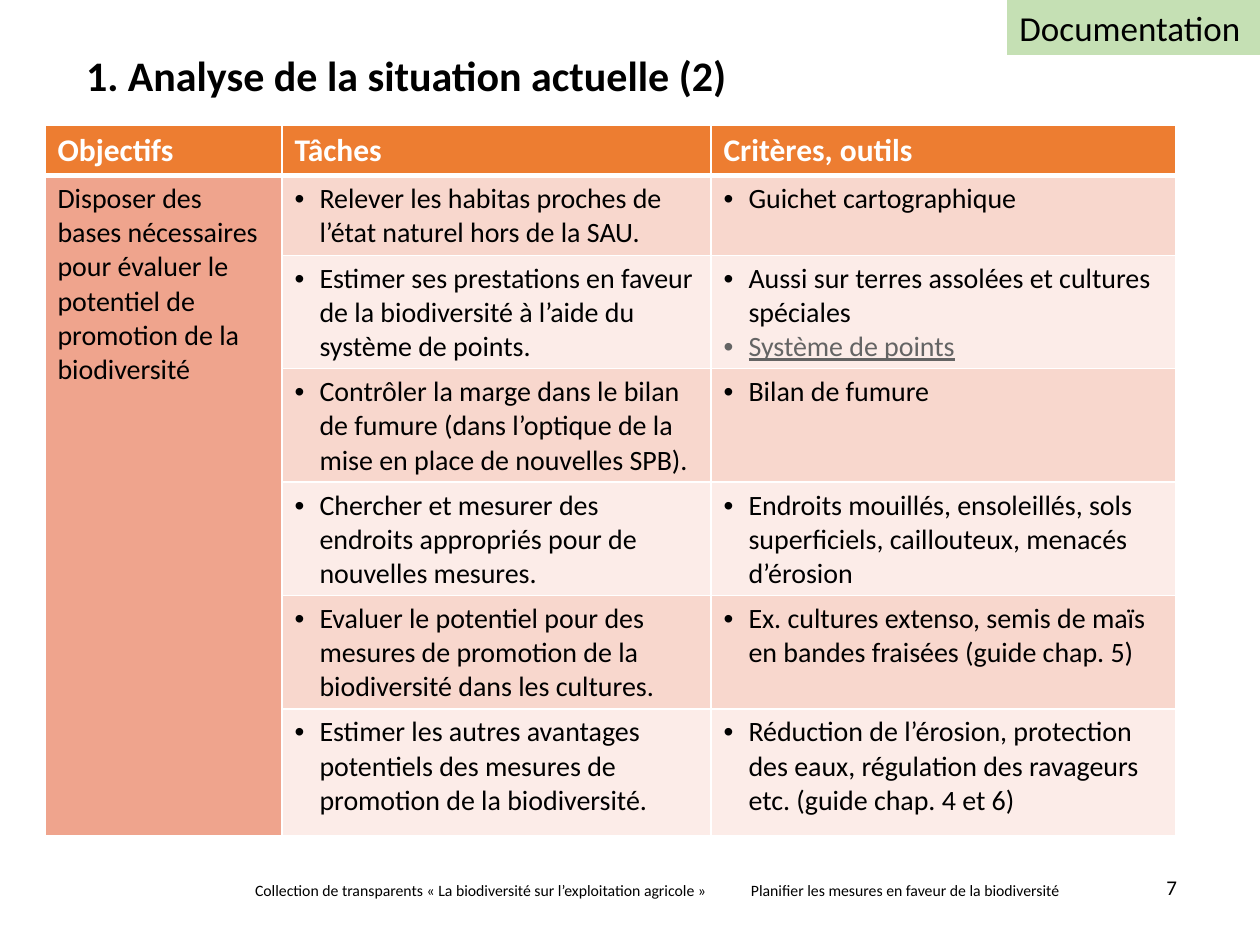
from dataclasses import dataclass

import pptx
import pptx.dml.color
import pptx.enum.shapes
import pptx.enum.text
import pptx.oxml
import pptx.oxml.ns
import pptx.util
from lxml import etree

PX_PER_INCH = 126
FONT = "Calibri"
BLACK, WHITE, LINK_GREY = "000000", "FFFFFF", "646464"
HEADER_FILL, GOAL_FILL, TAB_FILL = "ED7D31", "EFA48D", "C5E0B4"
BAND_FILLS = ("F8D7CD", "FCECE8")
HANGING = 25
LINK_TEXT = "Système de points"
ALIGN = pptx.enum.text.PP_ALIGN
ANCHOR = pptx.enum.text.MSO_ANCHOR


@dataclass(frozen=True)
class Box:
    left: int
    top: int
    width: int
    height: int


@dataclass(frozen=True)
class Step:
    height: int
    task: str
    criteria: tuple[str, ...]


TABLE_BOX = Box(45, 125, 1131, 710)
COLUMN_WIDTHS = (237, 429, 465)
HEADER_HEIGHT = 49
HEADERS = ("Objectifs", "Tâches", "Critères, outils")
GOAL = ("Disposer des bases nécessaires pour évaluer le potentiel "
        "de promotion de la biodiversité")
STEPS = (
    Step(78, "Relever les habitas proches de l’état naturel hors de la SAU.",
         ("Guichet cartographique",)),
    Step(110, "Estimer ses prestations en faveur de la biodiversité à l’aide "
              "du système de points.",
         ("Aussi sur terres assolées et cultures spéciales", LINK_TEXT)),
    Step(110, "Contrôler la marge dans le bilan de fumure (dans l’optique de "
              "la mise en place de nouvelles SPB).",
         ("Bilan de fumure",)),
    Step(110, "Chercher et mesurer des endroits appropriés pour de nouvelles "
              "mesures.",
         ("Endroits mouillés, ensoleillés, sols superficiels, caillouteux, "
          "menacés d’érosion",)),
    Step(110, "Evaluer le potentiel pour des mesures de promotion de la "
              "biodiversité dans les cultures.",
         ("Ex. cultures extenso, semis de maïs en bandes fraisées "
          "(guide chap. 5)",)),
    Step(127, "Estimer les autres avantages potentiels des mesures de "
              "promotion de la biodiversité.",
         ("Réduction de l’érosion, protection des eaux, régulation des "
          "ravageurs etc. (guide chap. 4 et 6)",)),
)


def px(length: int) -> pptx.util.Emu:
    return pptx.util.Emu(round(length * 914400 / PX_PER_INCH))


def place(box: Box) -> tuple[pptx.util.Emu, ...]:
    return px(box.left), px(box.top), px(box.width), px(box.height)


def rgb(color: str) -> pptx.dml.color.RGBColor:
    return pptx.dml.color.RGBColor.from_string(color)


def fill_solid(target, color: str) -> None:
    target.fill.solid()
    target.fill.fore_color.rgb = rgb(color)


def write(paragraph, text: str, *, size: int, color: str = BLACK,
          bold: bool = False, underline: bool = False, bullet: bool = False,
          align=ALIGN.LEFT, spacing: float | None = None) -> None:
    paragraph.alignment = align
    if spacing:
        paragraph.line_spacing = spacing
    if bullet:
        properties = paragraph._p.get_or_add_pPr()
        properties.set("marL", str(px(HANGING)))
        properties.set("indent", str(-px(HANGING)))
        for tag, key, value in (("a:buFont", "typeface", "Arial"),
                                ("a:buChar", "char", "•")):
            etree.SubElement(properties, pptx.oxml.ns.qn(tag)).set(key, value)
    run = paragraph.add_run()
    run.text = text
    run.font.name = FONT
    run.font.size = pptx.util.Pt(size)
    run.font.bold = bold
    run.font.underline = underline
    run.font.color.rgb = rgb(color)


def add_text(slide, box: Box, text: str, *, inset: int = 12,
             inset_y: int = 6, anchor=ANCHOR.TOP, **text_format) -> None:
    frame = slide.shapes.add_textbox(*place(box)).text_frame
    frame.word_wrap = True
    frame.vertical_anchor = anchor
    frame.margin_left = frame.margin_right = px(inset)
    frame.margin_top = frame.margin_bottom = px(inset_y)
    write(frame.paragraphs[0], text, **text_format)


def style_cell(cell, fill: str, top: int = 1, bottom: int = 1) -> None:
    """Give the cell white borders, widths in points, and a solid fill."""
    properties = cell._tc.get_or_add_tcPr()
    for side, width in (("L", 1), ("R", 1), ("T", top), ("B", bottom)):
        properties.append(pptx.oxml.parse_xml(
            f'<a:ln{side} {pptx.oxml.ns.nsdecls("a")} w="{pptx.util.Pt(width)}">'
            f'<a:solidFill><a:srgbClr val="{WHITE}"/></a:solidFill></a:ln{side}>'))
    fill_solid(cell, fill)


def fill_bullets(cell, items: tuple[str, ...]) -> None:
    frame = cell.text_frame
    for index, item in enumerate(items):
        paragraph = frame.add_paragraph() if index else frame.paragraphs[0]
        is_link = item == LINK_TEXT
        write(paragraph, item, size=16, bullet=True, underline=is_link,
              color=LINK_GREY if is_link else BLACK)


def add_plan_table(slide) -> None:
    table = slide.shapes.add_table(
        len(STEPS) + 1, len(HEADERS), *place(TABLE_BOX)).table
    for column, width in zip(table.columns, COLUMN_WIDTHS):
        column.width = px(width)
    heights = (HEADER_HEIGHT, *(step.height for step in STEPS))
    for row, height in zip(table.rows, heights):
        row.height = px(height)

    for column, header in enumerate(HEADERS):
        cell = table.cell(0, column)
        style_cell(cell, HEADER_FILL, bottom=3)
        write(cell.text_frame.paragraphs[0], header, size=18, color=WHITE,
              bold=True)

    for row, step in enumerate(STEPS, start=1):
        top = 3 if row == 1 else 1
        band = BAND_FILLS[(row - 1) % 2]
        for column, fill in enumerate((GOAL_FILL, band, band)):
            style_cell(table.cell(row, column), fill, top=top)
        fill_bullets(table.cell(row, 1), (step.task,))
        fill_bullets(table.cell(row, 2), step.criteria)

    goal_cell = table.cell(1, 0)
    goal_cell.merge(table.cell(len(STEPS), 0))
    write(goal_cell.text_frame.paragraphs[0], GOAL, size=16)


def add_section_tab(slide) -> None:
    tab = slide.shapes.add_shape(pptx.enum.shapes.MSO_SHAPE.RECTANGLE,
                                 *place(Box(1007, 0, 258, 55)))
    tab.shadow.inherit = False
    fill_solid(tab, TAB_FILL)
    tab.line.fill.background()
    tab.text_frame.word_wrap = False
    tab.text_frame.vertical_anchor = ANCHOR.TOP
    write(tab.text_frame.paragraphs[0], "Documentation", size=20)


def main() -> None:
    deck = pptx.Presentation()
    deck.slide_width, deck.slide_height = px(1260), px(945)
    slide = deck.slides.add_slide(deck.slide_layouts[6])

    add_text(slide, Box(243, 875, 486, 31),
             "Collection de transparents « La biodiversité sur "
             "l’exploitation agricole\u00a0»", size=9)
    add_text(slide, Box(739, 875, 338, 31),
             "Planifier les mesures en faveur de la biodiversité", size=9)
    add_text(slide, Box(86, 55, 1091, 70),
             "1. Analyse de la situation actuelle (2)", size=24, bold=True,
             inset=0, inset_y=0, spacing=0.9)
    add_text(slide, Box(1067, 857, 110, 49), "7", size=12, inset=0,
             anchor=ANCHOR.BOTTOM, align=ALIGN.RIGHT)
    add_plan_table(slide)
    add_section_tab(slide)
    deck.save("out.pptx")


if __name__ == "__main__":
    main()
